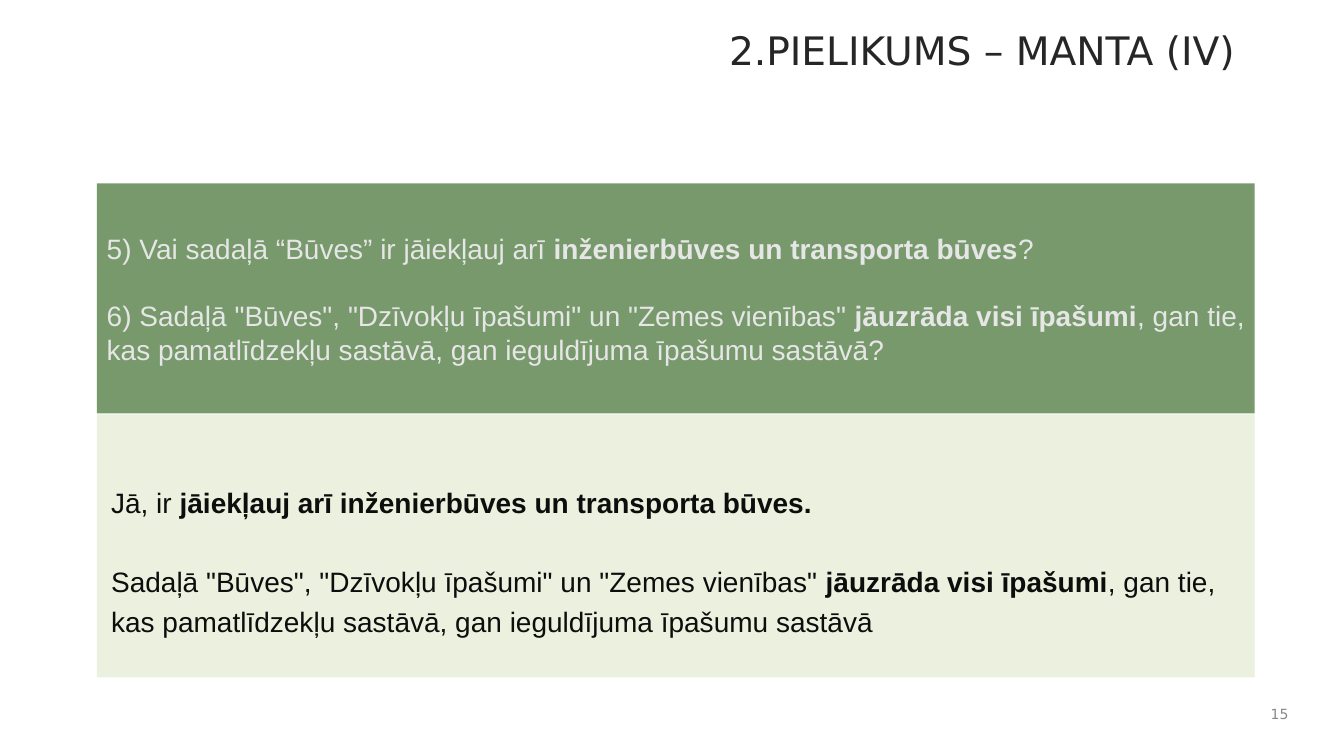
from dataclasses import dataclass

from lxml.etree import SubElement
from pptx import Presentation
from pptx.dml.color import RGBColor as Color
from pptx.enum.shapes import MSO_SHAPE as Preset
from pptx.enum.text import MSO_ANCHOR as Anchor, MSO_AUTO_SIZE as AutoSize, PP_ALIGN as Align
from pptx.oxml.ns import qn
from pptx.util import Cm, Pt


@dataclass(frozen=True)
class Theme:
    heading_font: str = "DejaVu Sans"
    body_font: str = "Arial"
    title_size: int = 28
    body_size: int = 20
    number_size: int = 10
    title_color: str = "262626"
    number_color: str = "898989"
    question_fill: str = "4A773C"
    question_color: str = "E6E6E6"
    answer_fill: str = "EBF1DE"
    answer_color: str = "0D0D0D"


THEME = Theme()
PANEL_LEFT, PANEL_WIDTH = Cm(2.44), Cm(29.18)

QUESTIONS = [
    [("5) Vai sadaļā “Būves” ir jāiekļauj arī ", False),
     ("inženierbūves un transporta būves", True),
     ("?", False)],
    [('6) Sadaļā "Būves", "Dzīvokļu īpašumi" un "Zemes vienības" ', False),
     ("jāuzrāda visi īpašumi", True),
     (", gan tie, kas pamatlīdzekļu sastāvā, gan ieguldījuma īpašumu sastāvā?", False)],
]
ANSWERS = [
    [("Jā, ir ", False),
     ("jāiekļauj arī inženierbūves un transporta būves.", True)],
    [('Sadaļā "Būves", "Dzīvokļu īpašumi" un "Zemes vienības" ', False),
     ("jāuzrāda visi īpašumi", True),
     (", gan tie, kas pamatlīdzekļu sastāvā, gan ieguldījuma īpašumu sastāvā", False)],
]


def style_font(font, name, size, color):
    font.name = name
    font.size = Pt(size)
    font.color.rgb = Color.from_string(color)


def write_heading(shape, text, size, color, anchor):
    frame = shape.text_frame
    frame.text = text
    frame.word_wrap = True
    frame.auto_size = AutoSize.NONE
    frame.vertical_anchor = anchor
    paragraph = frame.paragraphs[0]
    paragraph.alignment = Align.RIGHT
    style_font(paragraph.runs[0].font, THEME.heading_font, size, color)


def add_title(slide, text):
    title = slide.shapes.title
    title.left, title.top, title.width, title.height = Cm(6.25), Cm(0.53), Cm(25.12), Cm(2.29)
    write_heading(title, text, THEME.title_size, THEME.title_color, Anchor.TOP)


def add_page_number(slide, text):
    box = slide.shapes.add_textbox(Cm(31.6), Cm(17.58), Cm(1.12), Cm(0.84))
    write_heading(box, text, THEME.number_size, THEME.number_color, Anchor.MIDDLE)


def add_panel(slide, top, height, fill):
    panel = slide.shapes.add_shape(Preset.RECTANGLE, PANEL_LEFT, top, PANEL_WIDTH, height)
    panel.shadow.inherit = False
    panel.fill.solid()
    panel.fill.fore_color.rgb = Color.from_string(fill)
    panel.line.fill.background()
    panel.text_frame.word_wrap = True
    panel.text_frame.vertical_anchor = Anchor.MIDDLE
    return panel


def set_opacity(shape, percent):
    color = shape.fill._xPr.find(qn("a:solidFill"))[0]
    SubElement(color, qn("a:alpha"), val=str(percent * 1000))


def write_paragraphs(frame, paragraphs, color, gap, line_spacing):
    for index, pieces in enumerate(paragraphs):
        paragraph = frame.add_paragraph() if index else frame.paragraphs[0]
        paragraph.alignment = Align.LEFT
        paragraph.line_spacing = line_spacing
        if index:
            paragraph.space_before = Pt(gap)
        for text, bold in pieces:
            run = paragraph.add_run()
            run.text = text
            run.font.bold = bold
            style_font(run.font, THEME.body_font, THEME.body_size, color)


def add_answers(slide):
    panel = add_panel(slide, Cm(10.44), Cm(6.63), THEME.answer_fill)
    frame = panel.text_frame
    frame.margin_left = frame.margin_right = frame.margin_bottom = Cm(0.36)
    frame.margin_top = Cm(1)
    write_paragraphs(frame, ANSWERS, THEME.answer_color, gap=27, line_spacing=1.2)


def add_questions(slide):
    panel = add_panel(slide, Cm(4.62), Cm(5.8), THEME.question_fill)
    set_opacity(panel, 75)
    write_paragraphs(panel.text_frame, QUESTIONS, THEME.question_color, gap=24, line_spacing=1)
    panel.text_frame.paragraphs[-1].alignment = Align.JUSTIFY


def main():
    presentation = Presentation()
    presentation.slide_width, presentation.slide_height = Cm(33.87), Cm(19.05)
    slide = presentation.slides.add_slide(presentation.slide_layouts[5])
    add_answers(slide)
    add_title(slide, "2.PIELIKUMS – MANTA (IV)")
    add_page_number(slide, "15")
    add_questions(slide)
    presentation.save("out.pptx")


if __name__ == "__main__":
    main()
